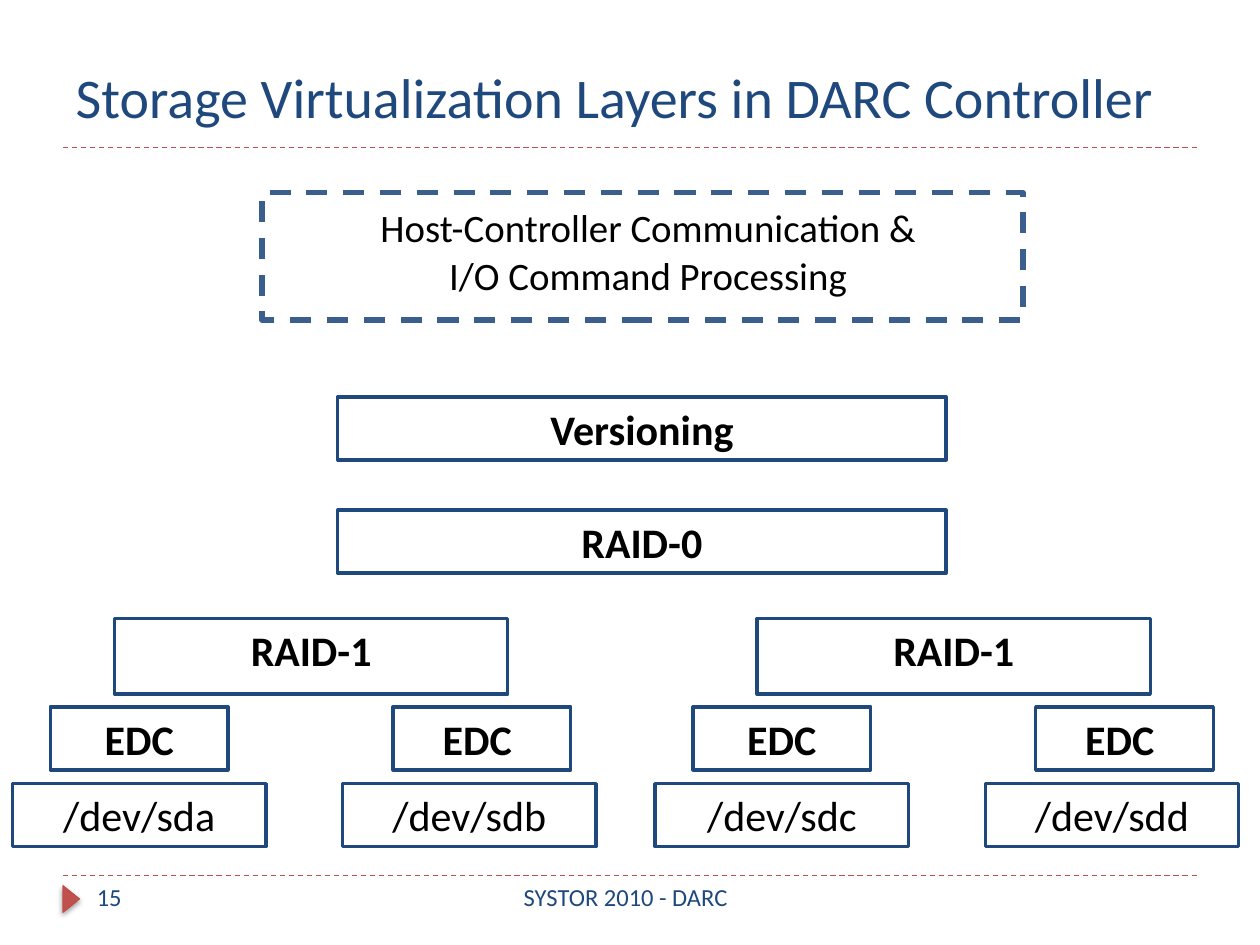
import pptx
import pptx.util
import pptx.dml.color
import pptx.enum.dml
import pptx.enum.shapes
import pptx.enum.text
import pptx.oxml
import pptx.oxml.ns
import lxml.etree

Inches = pptx.util.Inches
Pt = pptx.util.Pt
Shapes = pptx.enum.shapes.MSO_SHAPE
Align = pptx.enum.text.PP_ALIGN
Anchor = pptx.enum.text.MSO_ANCHOR
Dash = pptx.enum.dml.MSO_LINE

COLOURS = {
    "navy": "1F497D",
    "steel": "3A5F8C",
    "red": "C0504D",
    "dark red": "BF4C48",
    "black": "000000",
}
TITLE = {"size": Pt(32), "name": "Calibri"}
FOOTER = {"size": Pt(14), "name": "Calibri"}
LAYER = {"size": Pt(24), "name": "Calibri", "bold": True}
DEVICE = {"size": Pt(24), "name": "Calibri", "bold": False}
HOST = {"size": Pt(22.2), "name": "Calibri"}


def colour(name):
    return pptx.dml.color.RGBColor.from_string(COLOURS[name])


def set_values(target, values):
    for name, value in values.items():
        setattr(target, name, value)


def place(box, left, top, width, height):
    set_values(box, {"left": Inches(left), "top": Inches(top),
                     "width": Inches(width), "height": Inches(height)})


def write(box, lines, font, ink, align=Align.CENTER, anchor=Anchor.TOP, wrap=False):
    frame = box.text_frame
    set_values(frame, {"word_wrap": wrap, "vertical_anchor": anchor,
                       "auto_size": pptx.enum.text.MSO_AUTO_SIZE.NONE})
    for index, line in enumerate(lines):
        para = frame.paragraphs[0] if index == 0 else frame.add_paragraph()
        para.alignment = align
        span = para.add_run()
        span.text = line
        set_values(span.font, font)
        span.font.color.rgb = colour(ink)
    return frame


def add_text(page, area, lines, font, ink, **layout):
    box = page.shapes.add_textbox(*map(Inches, area))
    return write(box, lines, font, ink, **layout)


def add_outline(shapes, area, line_colour, line_format):
    box = shapes.add_shape(Shapes.RECTANGLE, *map(Inches, area))
    box.shadow.inherit = False
    box.fill.background()
    box.line.color.rgb = colour(line_colour)
    set_values(box.line, line_format)
    return box


def add_layer(shapes, area, text, font=LAYER):
    box = add_outline(shapes, area, "navy", {"width": Pt(2)})
    write(box, [text], font, "black")


def add_mirror(page, left, devices):
    group = page.shapes.add_group_shape()
    check_offsets = (0.3, 0.4)
    check_labels = ("EDC", "EDC ")
    for index, device in enumerate(devices):
        start = left + 2.62 * index
        add_layer(group.shapes, (start, 6.22, 2.01, 0.5), device, DEVICE)
        add_layer(group.shapes, (start + check_offsets[index], 5.61, 1.41, 0.5),
                  check_labels[index])
    add_layer(group.shapes, (left + 0.81, 4.91, 3.12, 0.6), "RAID-1")


def add_rule(page, top):
    rule = page.shapes.add_connector(pptx.enum.shapes.MSO_CONNECTOR.STRAIGHT,
                                     Inches(0.5), Inches(top), Inches(9.5), Inches(top))
    rule.line.color.rgb = colour("red")
    set_values(rule.line, {"width": Pt(0.75), "dash_style": Dash.DASH})
    lxml.etree.SubElement(rule._element.spPr, pptx.oxml.ns.qn("a:effectLst"))


def add_marker(page):
    marker = page.shapes.add_shape(Shapes.ISOSCELES_TRIANGLE, Inches(0.46), Inches(7.07),
                                   Inches(0.21), Inches(0.13))
    marker.rotation = 90
    marker.fill.solid()
    marker.fill.fore_color.rgb = colour("red")
    marker.line.color.rgb = colour("dark red")
    marker.line.width = Pt(0.75)
    marker.shadow.inherit = False
    effects = marker._element.spPr.find(pptx.oxml.ns.qn("a:effectLst"))
    effects.append(pptx.oxml.parse_xml(
        f'<a:outerShdw {pptx.oxml.ns.nsdecls("a")} blurRad="{Pt(3.1)}" dist="{Pt(1.6)}" '
        f'dir="5400000" rotWithShape="0"><a:srgbClr val="{COLOURS["black"]}">'
        '<a:alpha val="38000"/></a:srgbClr></a:outerShdw>'))


def add_host(page):
    add_outline(page.shapes, (2.08, 1.53, 6.04, 1.01), "steel",
                {"width": Pt(3), "dash_style": Dash.DASH})
    frame = add_text(page, (2.68, 1.64, 4.93, 0.81),
                     ["Host-Controller Communication &", "I/O Command Processing"],
                     HOST, "black")
    for para in frame.paragraphs:
        para.line_spacing = 0.8
    frame.paragraphs[1].space_before = Pt(5.8)


def main():
    deck = pptx.Presentation()
    set_values(deck, {"slide_width": Inches(10), "slide_height": Inches(7.5)})
    page = deck.slides.add_slide(deck.slide_layouts[5])
    for top in (6.95, 1.17):
        add_rule(page, top)
    add_marker(page)
    title = page.shapes.title
    place(title, 0.5, 0.25, 9, 0.83)
    write(title, ["Storage Virtualization Layers in DARC Controller"], TITLE, "navy",
          align=Align.LEFT, anchor=Anchor.BOTTOM, wrap=True)
    add_text(page, (0.67, 6.95, 2.17, 0.4), ["15"], FOOTER, "navy",
             align=Align.LEFT, wrap=True)
    add_text(page, (2.92, 6.95, 4.09, 0.4), ["SYSTOR 2010 - DARC"], FOOTER, "navy",
             wrap=True)
    add_mirror(page, 0.1, ("/dev/sda", "/dev/sdb"))
    add_mirror(page, 5.2, ("/dev/sdc", "/dev/sdd"))
    for top, label in ((4.05, "RAID-0"), (3.15, "Versioning")):
        add_layer(page.shapes, (2.68, top, 4.83, 0.5), label)
    add_host(page)
    deck.save("out.pptx")


if __name__ == "__main__":
    main()
